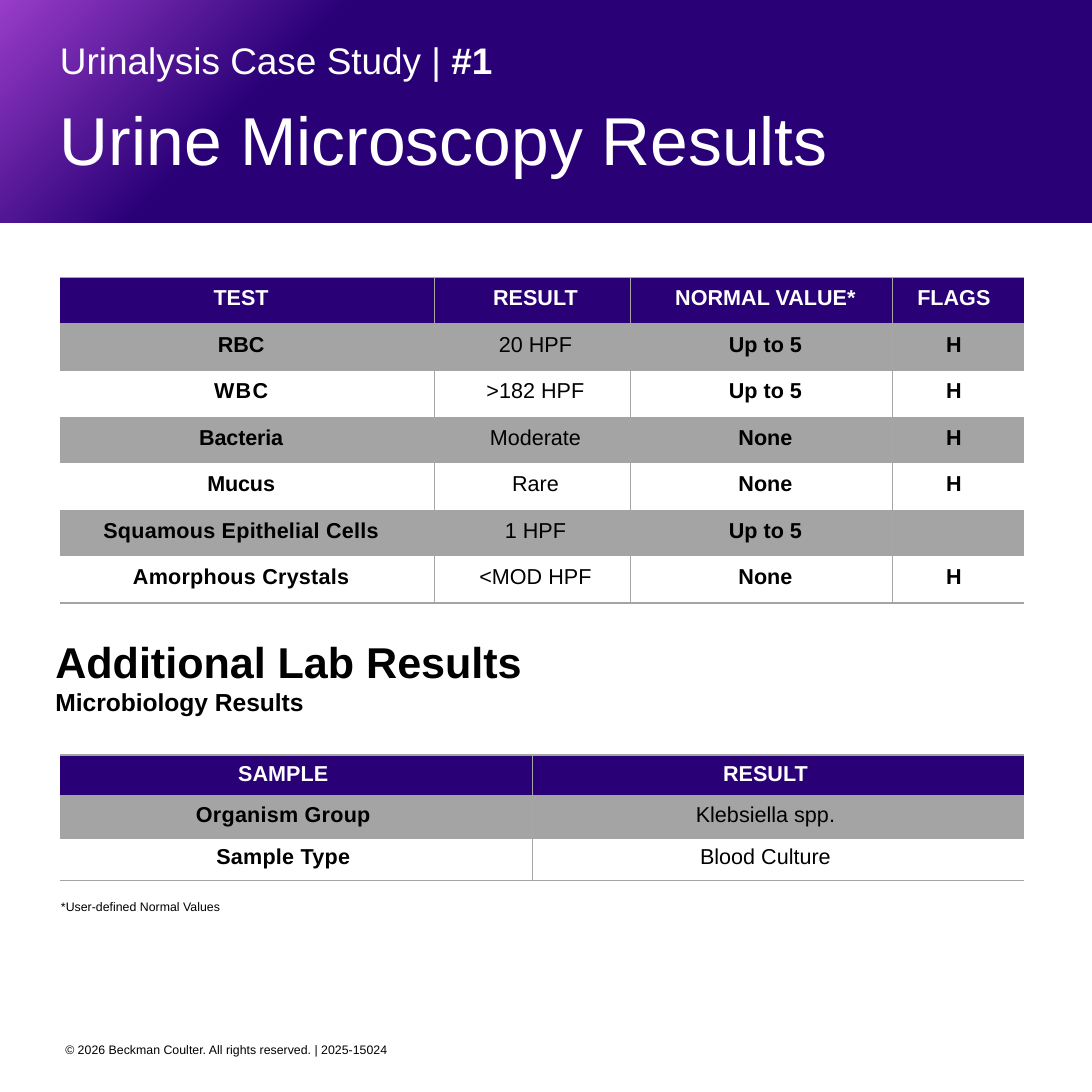
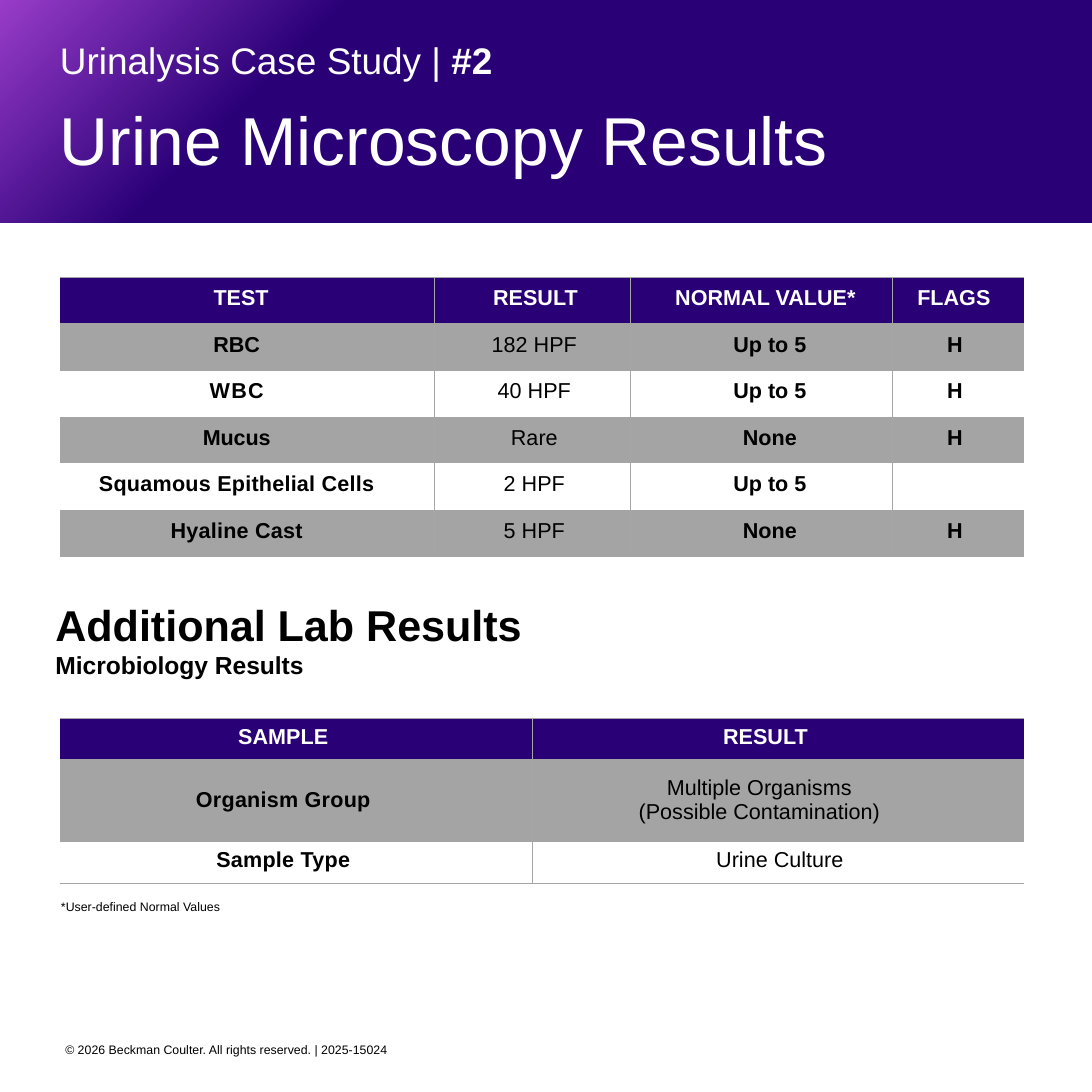
import pptx
import pptx.dml.color
import pptx.enum.shapes
import pptx.enum.text
import pptx.oxml
import pptx.oxml.ns
import pptx.util

Inches = pptx.util.Inches
Pt = pptx.util.Pt
ANCHOR = pptx.enum.text.MSO_ANCHOR
CENTER = pptx.enum.text.PP_ALIGN.CENTER

TEST_HEAD = ("TEST", "RESULT", "NORMAL VALUE*", "FLAGS")
TEST_COLS = (3.38, 1.77, 2.36, 1.19)
TEST_HEAD_SHIFT = (-0.11, 0.05, 0.07, -0.08)
SAMPLE_HEAD = ("SAMPLE", "RESULT")
SAMPLE_COLS = (4.26, 4.44)
SAMPLE_SHIFT = (-0.23, -0.23)

CASES = [
    {
        "number": "#1",
        "tests": [
            ("RBC", "20 HPF", "Up to 5", "H"),
            ("WBC", ">182 HPF", "Up to 5", "H"),
            ("Bacteria", "Moderate", "None", "H"),
            ("Mucus", "Rare", "None", "H"),
            ("Squamous Epithelial Cells", "1 HPF", "Up to 5", ""),
            ("Amorphous Crystals", "<MOD HPF", "None", "H"),
        ],
        "test_shift": TEST_HEAD_SHIFT,
        "heading_top": 5.72,
        "sample_top": 6.81,
        "samples": [("Organism Group", "Klebsiella spp."), ("Sample Type", "Blood Culture")],
        "sample_shifts": [SAMPLE_SHIFT] * 3,
        "sample_heights": (0.37, 0.38, 0.38),
        "middle_rows": (),
    },
    {
        "number": "#2",
        "tests": [
            ("RBC", "182 HPF", "Up to 5", "H"),
            ("WBC", "40 HPF", "Up to 5", "H"),
            ("Mucus", "Rare", "None", "H"),
            ("Squamous Epithelial Cells", "2 HPF", "Up to 5", ""),
            ("Hyaline Cast", "5 HPF", "None", "H"),
        ],
        "test_shift": (-0.19, 0.03, 0.15, -0.06),
        "heading_top": 5.39,
        "sample_top": 6.48,
        "samples": [
            ("Organism Group", "Multiple Organisms\v(Possible Contamination)"),
            ("Sample Type", "Urine Culture"),
        ],
        "sample_shifts": [SAMPLE_SHIFT, (-0.23, -0.34), (-0.23, 0.03)],
        "sample_heights": (0.37, 0.74, 0.38),
        "middle_rows": (1,),
    },
]


class Deck:
    """Build the case study slides in one shared style."""

    FONT = "Arial"
    LEFT = 0.54
    WIDTH = 8.7
    COLORS = {
        "navy": "290076",
        "purple": "983CC9",
        "white": "FFFFFF",
        "black": "000000",
        "row_line": "A4A4A4",
        "column_line": "A6A6A6",
    }

    def __init__(self, side):
        self.prs = pptx.Presentation()
        self.prs.slide_width = self.prs.slide_height = Inches(side)
        self.side = side
        self.s = None

    def rgb(self, name):
        return pptx.dml.color.RGBColor.from_string(self.COLORS[name])

    def style(self, r, size, color, bold=False, spacing=0):
        r.font.name = self.FONT
        r.font.size = Pt(size)
        r.font.bold = bold
        r.font.color.rgb = self.rgb(color)
        if spacing:
            r._r.get_or_add_rPr().set("spc", str(round(spacing * 100)))

    def slide(self, number):
        self.s = self.prs.slides.add_slide(self.prs.slide_layouts[6])
        self.text((0.49, 9.35, 5.21, 0.24),
                  [[("© 2026 Beckman Coulter. All rights reserved. | 2025-15024", 8, False)]],
                  insets=(0.1, 0.05))
        self.band(2.01)
        self.text((self.LEFT, 0.67, self.WIDTH, 1.15),
                  [[("Urine Microscopy Results", 44, False)]], "white", anchor=ANCHOR.MIDDLE)
        self.text((self.LEFT, 0.34, self.WIDTH, 0.4),
                  [[("Urinalysis Case Study | ", 24, False), (number, 24, True)]], "white")

    def band(self, height):
        sp = self.s.shapes.add_shape(pptx.enum.shapes.MSO_SHAPE.RECTANGLE,
                                     0, 0, Inches(self.side), Inches(height))
        sp.shadow.inherit = False
        sp.line.fill.background()
        sp.fill.gradient()
        sp.fill.gradient_angle = 315
        stops = sp.fill.gradient_stops
        for stop, color, position in zip(stops, ("purple", "navy"), (0, 0.27)):
            stop.color.rgb = self.rgb(color)
            stop.position = position

    def text(self, box, paragraphs, color="black", insets=(0, 0), anchor=ANCHOR.TOP):
        tf = self.s.shapes.add_textbox(*map(Inches, box)).text_frame
        tf.word_wrap = True
        tf.vertical_anchor = anchor
        tf.margin_left = tf.margin_right = Inches(insets[0])
        tf.margin_top = tf.margin_bottom = Inches(insets[1])
        for i, runs in enumerate(paragraphs):
            p = tf.add_paragraph() if i else tf.paragraphs[0]
            for words, size, bold in runs:
                r = p.add_run()
                r.text = words
                self.style(r, size, color, bold)

    def border(self, cell, side, color, width):
        ln = pptx.oxml.parse_xml(
            f'<a:ln{side} {pptx.oxml.ns.nsdecls("a")} w="{int(Pt(width))}">'
            + (f'<a:solidFill><a:srgbClr val="{self.COLORS[color]}"/></a:solidFill>'
               if width else "<a:noFill/>")
            + f"</a:ln{side}>")
        cell._tc.get_or_add_tcPr().append(ln)

    def fill(self, cell, row):
        if row and row % 2 == 0:
            cell.fill.background()
            return
        cell.fill.solid()
        cell.fill.fore_color.rgb = self.rgb("row_line" if row else "navy")
        if row:
            color = cell._tc.tcPr.find(".//" + pptx.oxml.ns.qn("a:srgbClr"))
            color.append(pptx.oxml.parse_xml(
                f'<a:alpha {pptx.oxml.ns.nsdecls("a")} val="20000"/>'))

    def cell_text(self, cell, words, row, col, shift):
        p = cell.text_frame.paragraphs[0]
        p.text = words
        p.alignment = CENTER
        p._p.get_or_add_pPr().set("marL" if shift > 0 else "marR", str(Inches(abs(shift))))
        spacing = 0
        if row and col == 0:
            spacing = 0.8 if words == "WBC" else 0.15 if " " in words else -0.1
        for r in p.runs:
            self.style(r, 14, "black" if row else "white", row == 0 or col != 1, spacing)

    def table(self, top, widths, heights, rows, shifts, inset, middle_rows=()):
        frame = self.s.shapes.add_table(len(rows), len(widths), Inches(self.LEFT), Inches(top),
                                        Inches(sum(widths)), Inches(sum(heights)))
        tbl = frame.table
        tbl.first_row = tbl.horz_banding = False
        for column, width in zip(tbl.columns, widths):
            column.width = Inches(width)
        for line, height in zip(tbl.rows, heights):
            line.height = Inches(height)
        rules = {0: 1, 1: 1, 2: 0.5, len(rows): 1}
        for i, row in enumerate(rows):
            for j, words in enumerate(row):
                cell = tbl.cell(i, j)
                middle = i in middle_rows
                cell.vertical_anchor = ANCHOR.MIDDLE if middle else ANCHOR.TOP
                cell.margin_left = cell.margin_right = cell.margin_bottom = 0
                cell.margin_top = Inches(0 if middle else inset)
                self.border(cell, "L", "column_line", 0.5 if j else 0)
                self.border(cell, "R", "column_line", 0.5 if j < len(row) - 1 else 0)
                self.border(cell, "T", "row_line", rules.get(i, 0))
                self.border(cell, "B", "row_line", rules.get(i + 1, 0))
                self.fill(cell, i)
                if words:
                    self.cell_text(cell, words, i, j, shifts[i][j])


def main():
    deck = Deck(9.85)
    for case in CASES:
        deck.slide(case["number"])
        tests = [TEST_HEAD] + case["tests"]
        deck.table(2.5, TEST_COLS, [0.42] * len(tests), tests,
                   [TEST_HEAD_SHIFT] + [case["test_shift"]] * len(case["tests"]), 0.08)
        deck.table(case["sample_top"], SAMPLE_COLS, case["sample_heights"],
                   [SAMPLE_HEAD] + case["samples"], case["sample_shifts"], 0.06,
                   case["middle_rows"])
        deck.text((0.5, case["heading_top"], 7.04, 0.77),
                  [[("Additional Lab Results", 28, True)], [("Microbiology Results", 16, True)]],
                  insets=(0, 0.01))
        deck.text((0.55, 8.11, 2.58, 0.14), [[("*User-defined Normal Values", 8, False)]])
    deck.prs.save("out.pptx")


if __name__ == "__main__":
    main()
